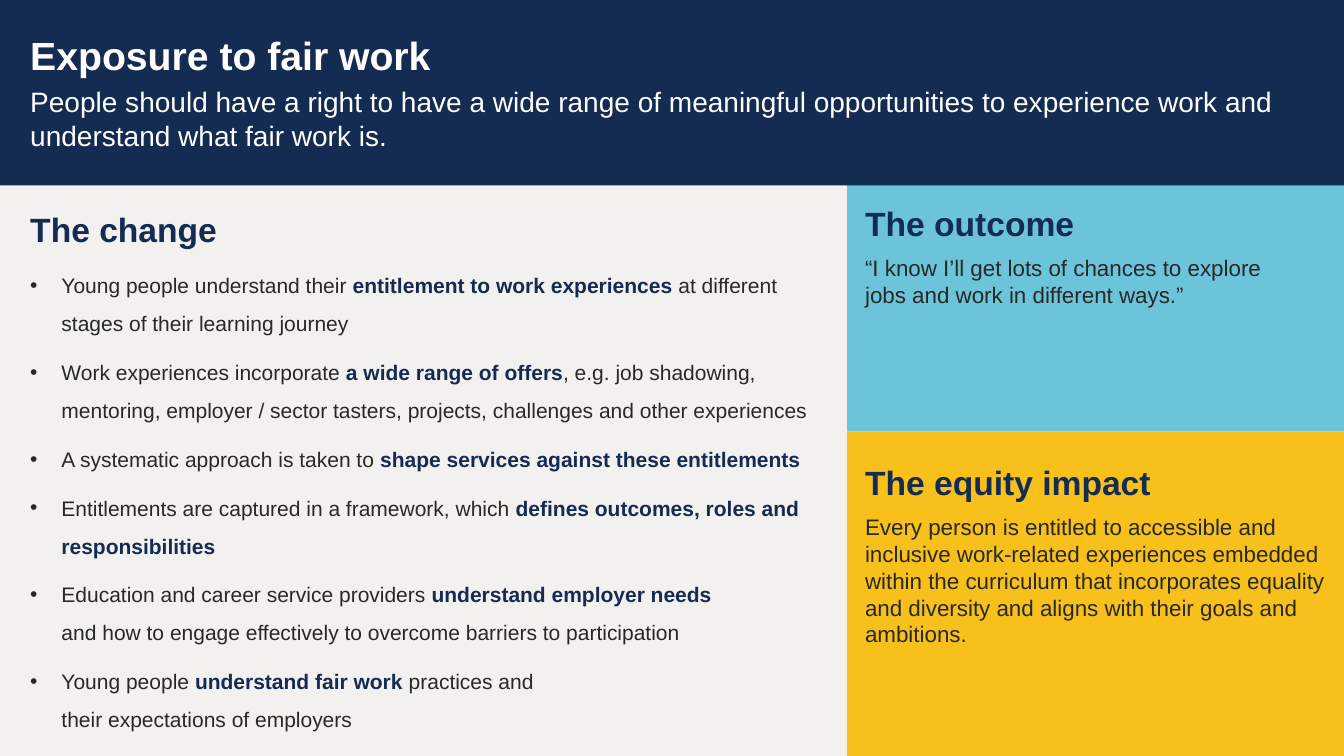
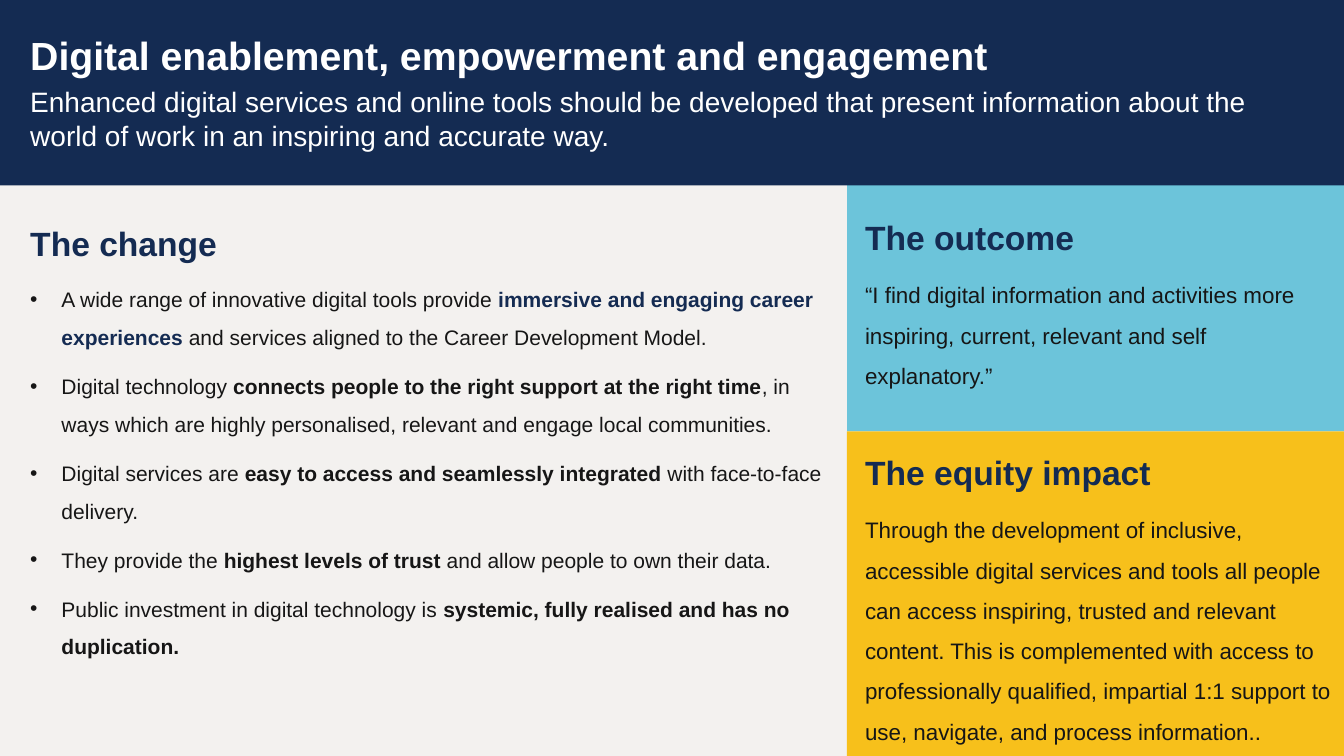
from dataclasses import dataclass
from typing import Any

from lxml.etree import SubElement
from pptx import Presentation
from pptx.dml.color import RGBColor
from pptx.enum.shapes import MSO_SHAPE
from pptx.enum.text import MSO_ANCHOR, MSO_AUTO_SIZE, PP_ALIGN
from pptx.oxml.ns import qn
from pptx.slide import Slide
from pptx.text.text import TextFrame
from pptx.util import Inches, Pt

NAVY = "142B52"
WHITE = "FFFFFF"
FONT = "Arial"
WIDTH, HEIGHT = 13.33, 7.5
SPLIT, TOP, MID = 8.4, 1.71, 4.28
LEFT, SIDE = 0.3, 8.58
FRAME = {
    "margin_left": 0, "margin_top": 0, "margin_right": 0, "margin_bottom": 0,
    "word_wrap": True, "auto_size": MSO_AUTO_SIZE.NONE,
    "vertical_anchor": MSO_ANCHOR.TOP,
}


@dataclass
class Box:
    x: float
    y: float
    w: float
    h: float


@dataclass
class Band:
    box: Box
    fill: str


@dataclass
class Run:
    text: str
    size: float
    hue: str
    bold: bool = False


@dataclass
class Point:
    lead: str
    strong: str
    tail: str = ""
    hue: str = NAVY


@dataclass
class Panel:
    title: str
    text: str
    box: Box


@dataclass
class Page:
    title: str
    claim: str
    ink: str
    list_box: Box
    points: list[Point]
    panels: list[Panel]
    pitch: float


BANDS = [
    Band(Box(SPLIT, TOP, WIDTH - SPLIT, MID - TOP), "6CC4DA"),
    Band(Box(0, TOP, SPLIT, HEIGHT - TOP), "F3F1EF"),
    Band(Box(SPLIT, MID, WIDTH - SPLIT, HEIGHT - MID), "F7C01B"),
    Band(Box(0, 0, WIDTH, 1.84), NAVY),
]

DARK = "161616"
PAGES = [
    Page(
        "Exposure to fair work",
        "People should have a right to have a wide range of meaningful opportunities "
        "to experience work and understand what fair work is.",
        "282825",
        Box(LEFT, 1.87, 8.01, 5.5),
        [
            Point("Young people understand their ", "entitlement to work experiences ",
                  "at different stages of their learning journey"),
            Point("Work experiences incorporate ", "a wide range of offers",
                  ", e.g. job shadowing, mentoring, employer / sector tasters, "
                  "projects, challenges and other experiences"),
            Point("A systematic approach is taken to ",
                  "shape services against these entitlements"),
            Point("Entitlements are captured in a framework, which ",
                  "defines outcomes, roles and responsibilities"),
            Point("Education and career service providers ", "understand employer needs ",
                  "\nand how to engage effectively to overcome barriers to participation"),
            Point("Young people ", "understand fair work ",
                  "practices and \ntheir expectations of employers"),
        ],
        [
            Panel("The outcome",
                  "“I know I’ll get lots of chances to explore jobs and work "
                  "in different ways.”",
                  Box(SIDE, 2.01, 4.22, 1.53)),
            Panel("The equity impact",
                  "Every person is entitled to accessible and inclusive work-related "
                  "experiences embedded within the curriculum that incorporates equality "
                  "and diversity and aligns with their goals and ambitions.",
                  Box(SIDE, 4.58, 4.66, 1.53)),
        ],
        1.0,
    ),
    Page(
        "Digital enablement, empowerment and engagement",
        "Enhanced digital services and online tools should be developed that present "
        "information about the world of work in an inspiring and accurate way.",
        DARK,
        Box(LEFT, 2.01, 7.91, 5.3),
        [
            Point("A wide range of innovative digital tools provide ",
                  "immersive and engaging career experiences ",
                  "and services aligned to the Career Development Model."),
            Point("Digital technology ",
                  "connects people to the right support at the right time",
                  ", in ways which are highly personalised, relevant and engage "
                  "local communities.", DARK),
            Point("Digital services are ", "easy to access and seamlessly integrated ",
                  "with face-to-face delivery.", DARK),
            Point("They provide the ", "highest levels of trust ",
                  "and allow people to own their data.", DARK),
            Point("Public investment in digital technology is ",
                  "systemic, fully realised and has no duplication.", hue=DARK),
        ],
        [
            Panel("The outcome",
                  "“I find digital information and activities more inspiring, current, "
                  "relevant and self explanatory.”",
                  Box(SIDE, 1.95, 4.66, 1.53)),
            Panel("The equity impact",
                  "Through the development of inclusive, accessible digital services and "
                  "tools all people can access inspiring, trusted and relevant content. "
                  "This is complemented with access to professionally qualified, impartial "
                  "1:1 support to use, navigate, and process information..",
                  Box(SIDE, MID, 4.66, 3.1)),
        ],
        1.5,
    ),
]


def color(code: str) -> RGBColor:
    return RGBColor.from_string(code)


def apply(item: Any, form: dict[str, Any]) -> None:
    for name, value in form.items():
        setattr(item, name, value)


def place(box: Box) -> dict[str, Any]:
    return {"left": Inches(box.x), "top": Inches(box.y),
            "width": Inches(box.w), "height": Inches(box.h)}


def draw_band(slide: Slide, band: Band) -> None:
    shape = slide.shapes.add_shape(MSO_SHAPE.RECTANGLE, *place(band.box).values())
    shape.shadow.inherit = False
    shape.fill.solid()
    shape.fill.fore_color.rgb = color(band.fill)
    shape.line.fill.background()


def add_line(frame: TextFrame, runs: list[Run], pitch: float = 1.0,
             after: float = 8, dot: bool = False) -> None:
    first = frame.paragraphs[0]
    para = frame.add_paragraph() if first.runs else first
    apply(para, {"alignment": PP_ALIGN.LEFT, "line_spacing": pitch,
                 "space_before": Pt(0), "space_after": Pt(after)})
    props = para._p.get_or_add_pPr()
    indent = Inches(0.31) if dot else 0
    props.set("marL", str(indent))
    props.set("indent", str(-indent))
    if dot:
        SubElement(props, qn("a:buFont")).set("typeface", FONT)
        SubElement(props, qn("a:buChar")).set("char", "•")
    else:
        SubElement(props, qn("a:buNone"))
    for run in runs:
        for count, text in enumerate(run.text.split("\n")):
            if count:
                para.add_line_break()
            if text:
                part = para.add_run()
                part.text = text
                apply(part.font, {"name": FONT, "size": Pt(run.size), "bold": run.bold})
                part.font.color.rgb = color(run.hue)


def fit_holder(shape: Any, box: Box) -> TextFrame:
    apply(shape, place(box))
    apply(shape.text_frame, FRAME)
    shape.element.getparent().append(shape.element)
    return shape.text_frame


def add_box(slide: Slide, box: Box) -> TextFrame:
    frame = slide.shapes.add_textbox(*place(box).values()).text_frame
    apply(frame, FRAME)
    return frame


def draw_page(slide: Slide, page: Page) -> None:
    for band in BANDS:
        draw_band(slide, band)
    title = fit_holder(slide.shapes.title, Box(LEFT, 0.31, 12.74, 0.66))
    add_line(title, [Run(page.title, 28, WHITE, True)], after=0)
    claim = add_box(slide, Box(LEFT, 0.84, 12.64, 0.84))
    add_line(claim, [Run(page.claim, 20, WHITE)])
    body = fit_holder(slide.placeholders[1], page.list_box)
    add_line(body, [Run("The change", 24, NAVY, True)], 1.5)
    for point in page.points:
        runs = [Run(point.lead, 15, page.ink), Run(point.strong, 15, point.hue, True),
                Run(point.tail, 15, page.ink)]
        add_line(body, runs, 1.5, dot=True)
    for panel in page.panels:
        frame = add_box(slide, panel.box)
        add_line(frame, [Run(panel.title, 24, NAVY, True)], page.pitch)
        add_line(frame, [Run(panel.text, 16, page.ink)], page.pitch)


def main() -> None:
    deck = Presentation()
    apply(deck, {"slide_width": Inches(WIDTH), "slide_height": Inches(HEIGHT)})
    for page in PAGES:
        draw_page(deck.slides.add_slide(deck.slide_layouts[1]), page)
    deck.save("out.pptx")


if __name__ == "__main__":
    main()
